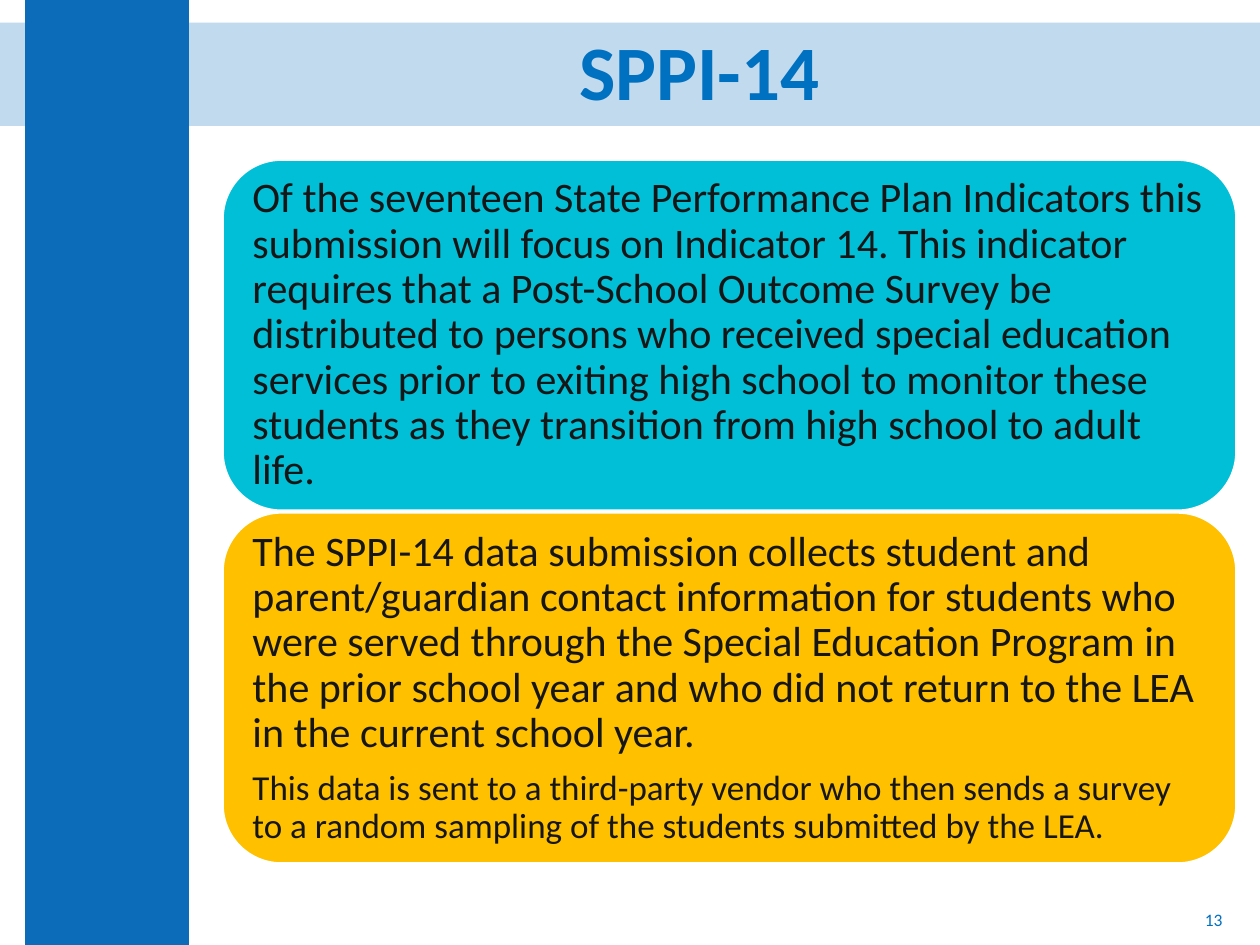
from pptx import Presentation
from pptx.dml.color import RGBColor
from pptx.enum.shapes import MSO_SHAPE as SHAPE
from pptx.enum.text import MSO_ANCHOR as ANCHOR, PP_ALIGN as ALIGN
from pptx.oxml.ns import qn
from pptx.util import Inches, Pt
from lxml import etree

BLUE, TITLE_BLUE, INK, WHITE = "0D6CB9", "0070C0", "161616", "FFFFFF"
CARD_LEFT, CARD_TOP, CARD_W, CARD_H, CARD_PITCH = 1.77, 1.27, 8.04, 2.78, 2.8

# Each card: fill colour and (text, size) paragraphs
CARDS = [
    ("00BFD7", [
        ("Of the seventeen State Performance Plan Indicators this submission "
         "will focus on Indicator 14. This indicator requires that a "
         "Post-School Outcome Survey be distributed to persons who received "
         "special education services prior to exiting high school to monitor "
         "these students as they transition from high school to adult life.", 24),
    ]),
    ("FFC000", [
        ("The SPPI-14 data submission collects student and parent/guardian "
         "contact information for students who were served through the "
         "Special Education Program in the prior school year and who did not "
         "return to the LEA in the current school year.", 24),
        ("This data is sent to a third-party vendor who then sends a survey "
         "to a random sampling of the students submitted by the LEA.", 20),
    ]),
]


def rgb(color):
    return RGBColor.from_string(color)


def add_block(slide, kind, box, fill, line=None, alpha=None):
    s = slide.shapes.add_shape(kind, *map(Inches, box))
    s.shadow.inherit = False
    s.fill.solid()
    s.fill.fore_color.rgb = rgb(fill)
    if alpha is not None:
        clr = s.fill._xPr.find(f".//{qn('a:srgbClr')}")
        etree.SubElement(clr, qn("a:alpha"), val=str(alpha * 1000))
    if line:
        s.line.color.rgb = rgb(line)
        s.line.width = Pt(1)
    else:
        s.line.fill.background()
    return s


def write(s, paragraphs, color, align=ALIGN.LEFT, spacing=0.9, bold=False, **margins):
    tf = s.text_frame
    frame = {"word_wrap": True, "vertical_anchor": ANCHOR.MIDDLE, **margins}
    for name, value in frame.items():
        setattr(tf, name, value)
    for i, (text, size) in enumerate(paragraphs):
        p = tf.add_paragraph() if i else tf.paragraphs[0]
        p.alignment, p.line_spacing = align, spacing
        if i:
            p.space_before = Pt(8)
        r = p.add_run()
        r.text = text
        for name, value in {"name": "Calibri", "size": Pt(size), "bold": bold}.items():
            setattr(r.font, name, value)
        r.font.color.rgb = rgb(color)


def add_label(slide, box, text, size, align, **style):
    s = slide.shapes.add_textbox(*map(Inches, box))
    write(s, [(text, size)], TITLE_BLUE, align, **style)


def add_card(slide, top, fill, paragraphs):
    s = add_block(slide, SHAPE.ROUNDED_RECTANGLE,
                  (CARD_LEFT, top, CARD_W, CARD_H), fill, WHITE)
    sides = ("left", "top", "right", "bottom")
    write(s, paragraphs, INK, **{f"margin_{side}": Inches(0.1) for side in sides})


def main():
    prs = Presentation()
    prs.slide_width, prs.slide_height = Inches(10), Inches(7.5)
    slide = prs.slides.add_slide(prs.slide_layouts[6])

    # Title band and side bar
    add_block(slide, SHAPE.RECTANGLE, (0, 0.18, 10, 0.82), BLUE, alpha=25)
    add_block(slide, SHAPE.RECTANGLE, (0.2, 0, 1.3, 7.5), BLUE)

    # Page number and title
    add_label(slide, (7.55, 7.1, 2.25, 0.4), "13", 10, ALIGN.RIGHT, spacing=1.0)
    add_label(slide, (1.67, 0.19, 7.9, 0.82), "SPPI-14 ", 44, ALIGN.CENTER, bold=True)

    # Stacked cards
    for i, (fill, paragraphs) in enumerate(CARDS):
        add_card(slide, CARD_TOP + i * CARD_PITCH, fill, paragraphs)

    prs.save("out.pptx")


if __name__ == "__main__":
    main()
